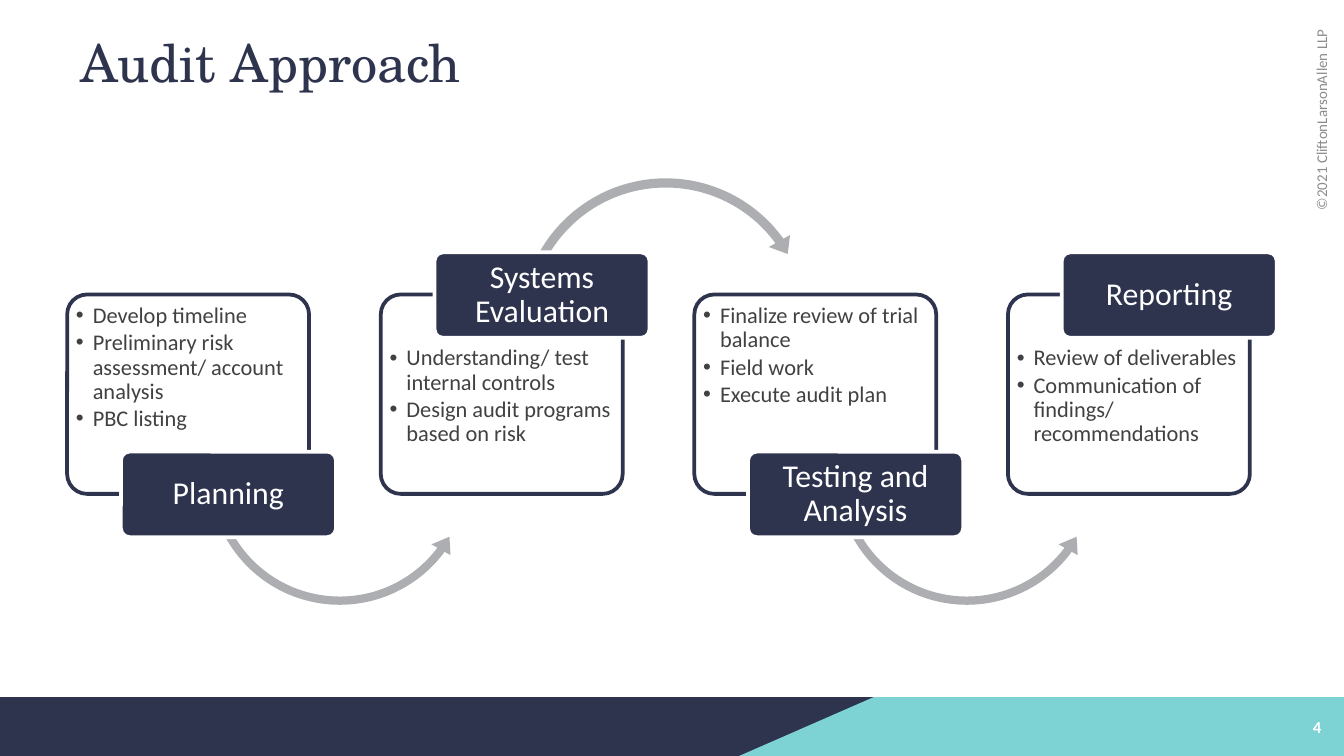
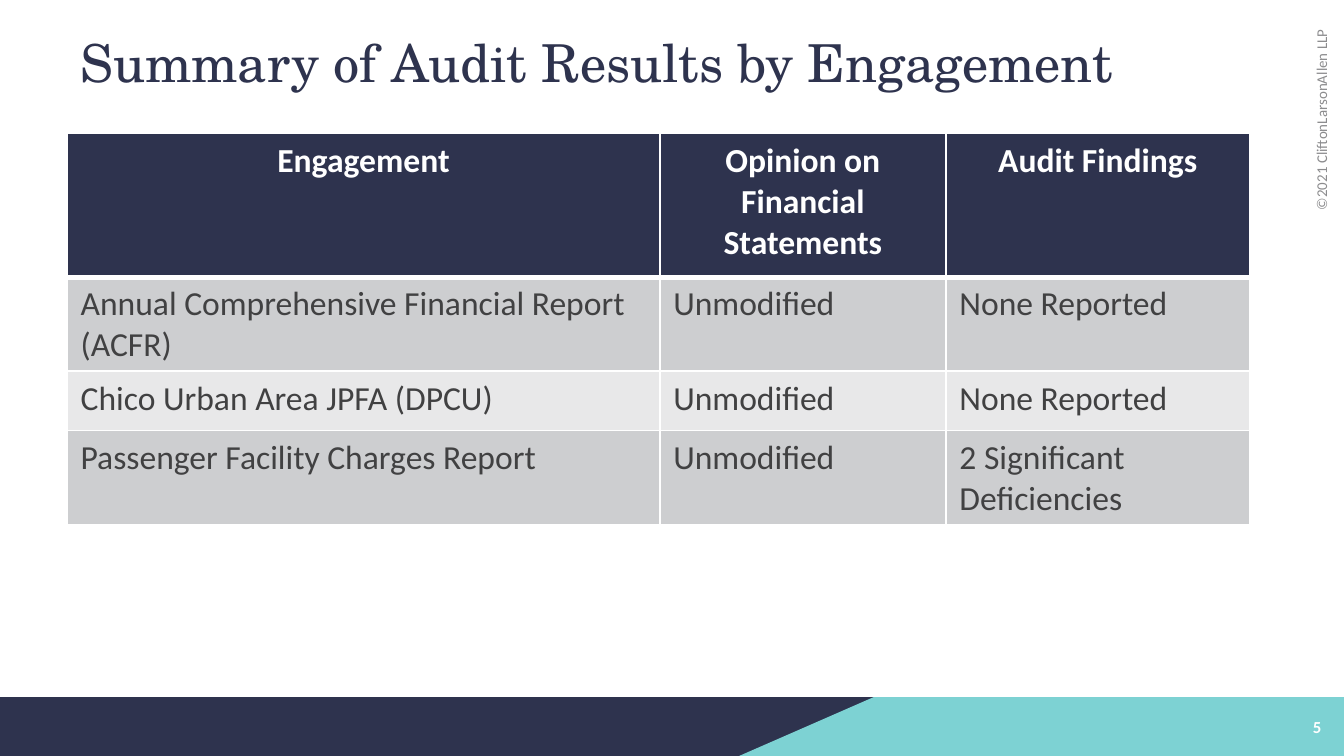
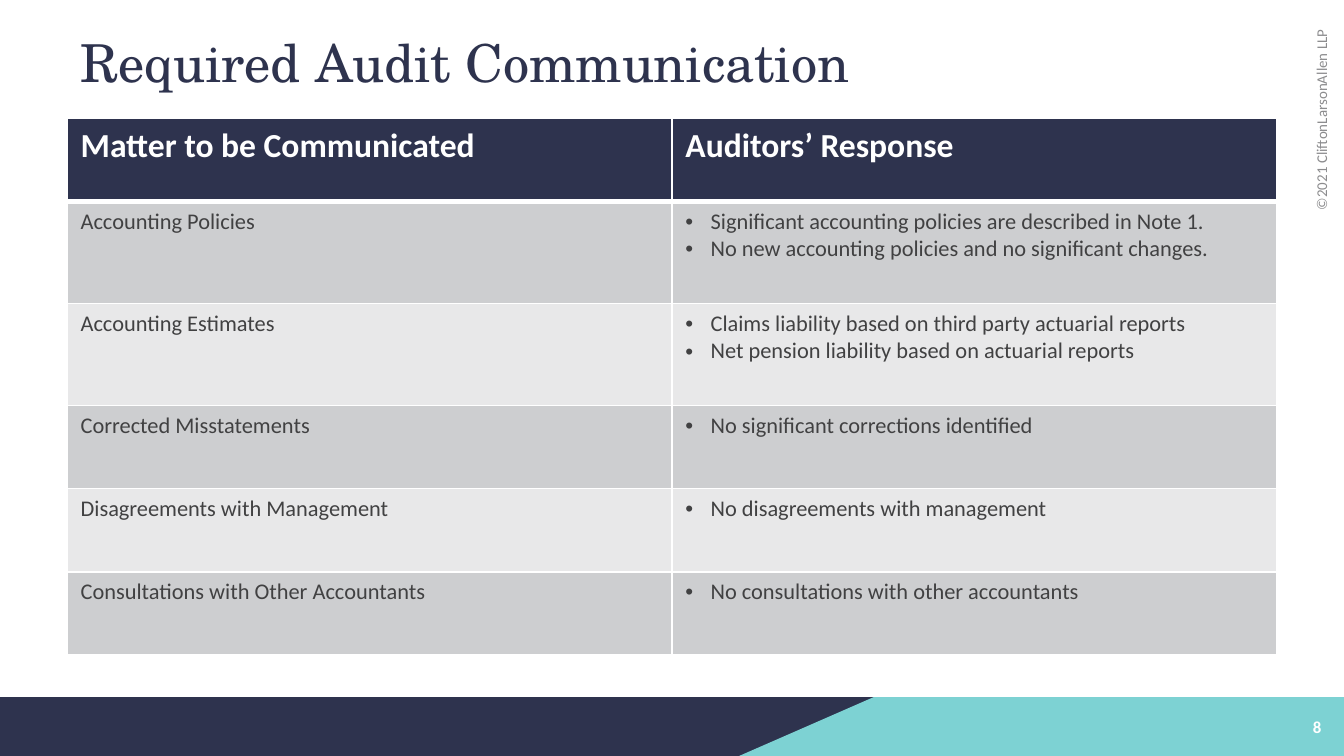
from lxml.etree import SubElement
from pptx import Presentation
from pptx.dml.color import RGBColor
from pptx.enum.shapes import MSO_SHAPE
from pptx.enum.text import MSO_ANCHOR, PP_ALIGN
from pptx.oxml.ns import qn
from pptx.util import Pt

NAVY, TEAL, WHITE = "2E334E", "7DD2D3", "FFFFFF"
ARROW_GRAY, TEXT_GRAY, NOTE_GRAY = "ADAEB2", "414142", "8C8C8E"
BODY_BANDS = ["CDCED0", "E8E8E9"]
SANS, SERIF = "Calibri", "TeX Gyre Schola"
SLIDE_WIDTH, SLIDE_HEIGHT, BAND_TOP = 720, 405, 373.5
LEFT = 36

TITLE = {"name": SERIF, "size": 28, "color": NAVY}
COPYRIGHT = {"size": 8, "color": NOTE_GRAY, "alignment": PP_ALIGN.RIGHT}
PAGE_NUMBER = {"size": 9, "color": WHITE, "bold": True, "alignment": PP_ALIGN.RIGHT}
STEP_LABEL = {"size": 17, "color": WHITE, "alignment": PP_ALIGN.CENTER, "line_spacing": 0.9}
STEP_BULLET = {"size": 12, "line_spacing": 0.9, "space_after": Pt(1.8), "indent": 9}
HEADER = {"size": 18, "color": WHITE, "bold": True}
CENTERED_HEADER = {**HEADER, "alignment": PP_ALIGN.CENTER}
LARGE_CELL = {"size": 18}
SMALL_CELL = {"size": 12}
CELL_BULLET = {"size": 12, "indent": 13.5}


def rgb(color):
    return RGBColor.from_string(color)


def points(*lengths):
    return [Pt(length) for length in lengths]


def add_bullet(paragraph, indent):
    properties = paragraph._p.get_or_add_pPr()
    properties.set("marL", str(Pt(indent)))
    properties.set("indent", str(-Pt(indent)))
    SubElement(properties, qn("a:buFont"), typeface="Arial")
    SubElement(properties, qn("a:buChar"), char="•")


def write(frame, lines, style):
    """Fill a text frame with one paragraph per line, in the given style."""
    for index, line in enumerate(lines):
        paragraph = frame.paragraphs[0] if index == 0 else frame.add_paragraph()
        if "indent" in style:
            add_bullet(paragraph, style["indent"])
        paragraph.alignment = PP_ALIGN.LEFT
        for name in ("alignment", "line_spacing", "space_after"):
            if name in style:
                setattr(paragraph, name, style[name])
        run = paragraph.add_run()
        run.text = line
        run.font.name = style.get("name", SANS)
        run.font.size = Pt(style["size"])
        run.font.bold = style.get("bold", False)
        run.font.color.rgb = rgb(style.get("color", TEXT_GRAY))


def add_borders(cell, top, bottom):
    """Draw white cell borders; they must precede the cell's fill."""
    properties = cell._tc.get_or_add_tcPr()
    for side, width in {"lnL": 1, "lnR": 1, "lnT": top, "lnB": bottom}.items():
        line = SubElement(properties, qn(f"a:{side}"), w=str(Pt(width)))
        SubElement(SubElement(line, qn("a:solidFill")), qn("a:srgbClr"), val=WHITE)


class Deck:
    """Holds the presentation, its shared style and the current slide."""

    def __init__(self):
        self.presentation = Presentation()
        self.presentation.slide_width = Pt(SLIDE_WIDTH)
        self.presentation.slide_height = Pt(SLIDE_HEIGHT)

    def start_slide(self, title, number):
        self.slide = self.presentation.slides.add_slide(self.presentation.slide_layouts[6])
        band_height = SLIDE_HEIGHT - BAND_TOP
        self.shape(MSO_SHAPE.RECTANGLE, (0, BAND_TOP, SLIDE_WIDTH, band_height), NAVY)
        self.polygon([(468, BAND_TOP), (SLIDE_WIDTH, BAND_TOP),
                      (SLIDE_WIDTH, SLIDE_HEIGHT), (396, SLIDE_HEIGHT)], TEAL)
        note = self.text((638, 66.2, 139.7, 24.5), ["©2021 CliftonLarsonAllen LLP"], COPYRIGHT)
        note.rotation = 270
        self.text((LEFT, 5.8, 648, 54), [title], TITLE)
        self.text((684, 375.8, 31, 27.4), [str(number)], PAGE_NUMBER)

    def paint(self, shape, fill, line=None):
        shape.shadow.inherit = False
        shape.fill.solid()
        shape.fill.fore_color.rgb = rgb(fill)
        if line:
            shape.line.color.rgb = rgb(line)
            shape.line.width = Pt(2)
        else:
            shape.line.fill.background()

    def shape(self, kind, box, fill, line=None, adjustments=()):
        shape = self.slide.shapes.add_shape(kind, *points(*box))
        self.paint(shape, fill, line)
        for index, value in enumerate(adjustments):
            shape.adjustments[index] = value
        return shape

    def polygon(self, corners, fill):
        start, *others = [points(*corner) for corner in corners]
        builder = self.slide.shapes.build_freeform(*start)
        builder.add_line_segments(others, close=True)
        self.paint(builder.convert_to_shape(), fill)

    def set_frame(self, shape, anchor, insets):
        frame = shape.text_frame
        frame.word_wrap = True
        frame.vertical_anchor = anchor
        sides = ("margin_left", "margin_top", "margin_right", "margin_bottom")
        for side, inset in zip(sides, points(*insets)):
            setattr(frame, side, inset)
        return frame

    def text(self, box, lines, style, anchor=MSO_ANCHOR.MIDDLE, insets=(7.2, 3.6, 7.2, 3.6)):
        shape = self.slide.shapes.add_textbox(*points(*box))
        write(self.set_frame(shape, anchor, insets), lines, style)
        return shape

    def step(self, left, label, bullets, label_on_top, has_arrow):
        """Draw a process step: bullet box, arrow to the next step, and label."""
        self.shape(MSO_SHAPE.ROUNDED_RECTANGLE, (left, 157.8, 129.6, 106.8), WHITE, NAVY, [0.1])
        text_top = 183.5 if label_on_top else 160.6
        self.text((left + 2.5, text_top, 124.6, 79.2), bullets, STEP_BULLET,
                  MSO_ANCHOR.TOP, (2.25, 2.25, 2.25, 2.25))
        if has_arrow and label_on_top:
            self.shape(MSO_SHAPE.CIRCULAR_ARROW, (left + 71, 91.5, 163.4, 163.4), ARROW_GRAY,
                       adjustments=[0.03, 3.77, 194.48, 125.76, 0.04])
        elif has_arrow:
            self.shape(MSO_SHAPE.LEFT_CIRCULAR_ARROW, (left + 72.5, 180.7, 147, 147), ARROW_GRAY,
                       adjustments=[0.03, 4.23, 21.98, 90.25, 0.04])
        label_top = 135.2 if label_on_top else 242
        tab = self.shape(MSO_SHAPE.ROUNDED_RECTANGLE, (left + 28.8, label_top, 115.2, 45.8),
                         NAVY, WHITE, [0.1])
        frame = self.set_frame(tab, MSO_ANCHOR.MIDDLE, (2.6, 1.7, 2.6, 1.7))
        write(frame, [label], STEP_LABEL)

    def table(self, top, widths, heights, rows, header_style, cell_style):
        """Add a table; a cell given as a list becomes bullets."""
        box = points(LEFT, top, sum(widths), sum(heights))
        table = self.slide.shapes.add_table(len(rows), len(widths), *box).table
        table.horz_banding = False
        for column, width in zip(table.columns, widths):
            column.width = Pt(width)
        for row, height in zip(table.rows, heights):
            row.height = Pt(height)
        for row_index, values in enumerate(rows):
            is_header = row_index == 0
            fill = NAVY if is_header else BODY_BANDS[(row_index - 1) % 2]
            for column_index, value in enumerate(values):
                cell = table.cell(row_index, column_index)
                add_borders(cell, 3 if row_index == 1 else 1, 3 if is_header else 1)
                cell.fill.solid()
                cell.fill.fore_color.rgb = rgb(fill)
                if isinstance(value, list):
                    write(cell.text_frame, value, CELL_BULLET)
                else:
                    write(cell.text_frame, [value], header_style if is_header else cell_style)


def build_approach(deck):
    deck.start_slide("Audit Approach", 4)
    steps = [
        ("Planning", ["Develop timeline", "Preliminary risk assessment/ account analysis",
                      "PBC listing"]),
        ("Systems Evaluation", ["Understanding/ test internal controls",
                                "Design audit programs based on risk"]),
        ("Testing and Analysis", ["Finalize review of trial balance", "Field work",
                                  "Execute audit plan"]),
        ("Reporting", ["Review of deliverables", "Communication of findings/ recommendations"]),
    ]
    for index, (label, bullets) in enumerate(steps):
        deck.step(LEFT + 168 * index, label, bullets,
                  label_on_top=index % 2 == 1, has_arrow=index < len(steps) - 1)


def build_results(deck):
    deck.start_slide("Summary of Audit Results by Engagement", 5)
    rows = [
        ("Engagement", "Opinion on Financial Statements", "Audit Findings"),
        ("Annual Comprehensive Financial Report (ACFR)", "Unmodified", "None Reported"),
        ("Chico Urban Area JPFA (DPCU)", "Unmodified", "None Reported"),
        ("Passenger Facility Charges Report", "Unmodified", "2 Significant Deficiencies"),
    ]
    deck.table(71.5, [317.5, 153.3, 162.7], [77, 50.4, 31.7, 50.4], rows,
               CENTERED_HEADER, LARGE_CELL)


def build_communication(deck):
    deck.start_slide("Required Audit Communication", 8)
    rows = [
        ("Matter to be Communicated", "Auditors’ Response"),
        ("Accounting Policies", ["Significant accounting policies are described in Note 1.",
                                 "No new accounting policies and no significant changes."]),
        ("Accounting Estimates", ["Claims liability based on third party actuarial reports",
                                  "Net pension liability based on actuarial reports"]),
        ("Corrected Misstatements", ["No significant corrections identified"]),
        ("Disagreements with Management", ["No disagreements with management"]),
        ("Consultations with Other Accountants", ["No consultations with other accountants"]),
    ]
    deck.table(63.5, [324, 324], [44.5, 54.7, 54.7, 44.5, 44.5, 44.5], rows,
               HEADER, SMALL_CELL)


def main():
    deck = Deck()
    build_approach(deck)
    build_results(deck)
    build_communication(deck)
    deck.presentation.save("out.pptx")


if __name__ == "__main__":
    main()
